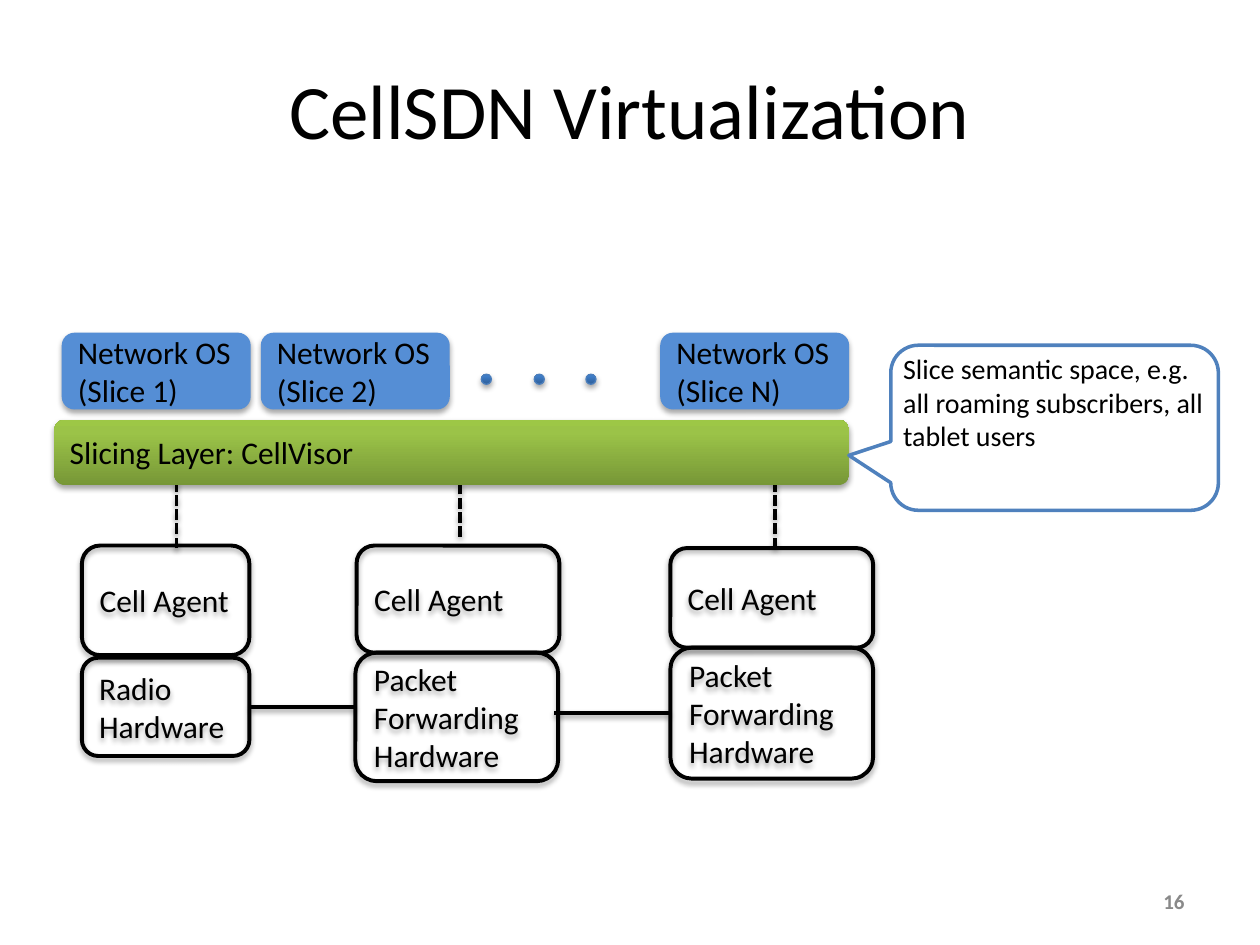
from typing import NamedTuple, Optional

from lxml.etree import SubElement
from pptx import Presentation
from pptx.dml.color import RGBColor
from pptx.enum.dml import MSO_LINE
from pptx.enum.shapes import MSO_CONNECTOR, MSO_SHAPE
from pptx.enum.text import MSO_ANCHOR as Anchor, MSO_AUTO_SIZE, PP_ALIGN as Align
from pptx.oxml.ns import qn
from pptx.util import Pt

PX = 9144  # EMU per px, 100 px to the inch
FONT = "Calibri"
BLACK, WHITE, BLUE = "000000", "FFFFFF", "558ED5"
GREEN_RAMP = [(0, "779737"), (80, "9BC348"), (100, "9DC746")]
DOT_RAMP = [(0, "2F5F99"), (80, "3D7CC7"), (100, "3A7CCB")]


class Box(NamedTuple):
    left: int
    top: int
    width: int
    height: int

    def emu(self) -> list[int]:
        return [v * PX for v in self]


class Node(NamedTuple):
    """A hardware column: an agent box standing on a device box."""
    agent: Box
    device: Box
    device_name: str


class Uplink(NamedTuple):
    x: int
    bottom: int


NODES = [
    Node(Box(65, 433, 133, 87), Box(65, 522, 133, 78), "Radio Hardware"),
    Node(Box(283, 433, 161, 85), Box(282, 518, 161, 102), "Packet Forwarding Hardware"),
    Node(Box(532, 435, 161, 79), Box(532, 514, 161, 104), "Packet Forwarding Hardware"),
]
UPLINKS = [Uplink(140, 435), Uplink(365, 426), Uplink(615, 435)]
SLICES = [(49, "1"), (207, "2"), (524, "N")]
DOTS = [382, 424, 465]


def rgb(color: str) -> RGBColor:
    return RGBColor.from_string(color)


def write(frame, lines: list[str], size: int = 18, color: str = BLACK,
          align=Align.LEFT, anchor=Anchor.MIDDLE, bold: bool = False) -> None:
    frame.word_wrap = True
    frame.vertical_anchor = anchor
    for i, line in enumerate(lines):
        paragraph = frame.paragraphs[0] if i == 0 else frame.add_paragraph()
        paragraph.alignment = align
        run = paragraph.add_run()
        run.text = line
        run.font.name, run.font.size, run.font.bold = FONT, Pt(size), bold
        run.font.color.rgb = rgb(color)


def add_shadow(effects, alpha: int, distance: int) -> None:
    shadow = SubElement(effects, qn("a:outerShdw"), blurRad="40000", dist=str(distance),
                        dir="5400000", rotWithShape="0")
    shade = SubElement(shadow, qn("a:srgbClr"), val=BLACK)
    SubElement(shade, qn("a:alpha"), val=str(alpha * 1000))


def fill_ramp(shape, ramp: list[tuple[int, str]]) -> None:
    """Fill with a gradient that runs from bottom to top."""
    shape.fill.gradient()
    shape.fill.gradient_angle = 90
    stops = shape._element.spPr.find(".//" + qn("a:gsLst"))
    for stop in list(stops):
        stops.remove(stop)
    for position, color in ramp:
        stop = SubElement(stops, qn("a:gs"), pos=str(position * 1000))
        SubElement(stop, qn("a:srgbClr"), val=color)


def add_shape(shapes, kind, box: Box, fill: Optional[str] = None, ramp=None,
              line: Optional[str] = None, line_pt: float = 2.25, shadow: bool = True):
    shape = shapes.add_shape(kind, *box.emu())
    if ramp:
        fill_ramp(shape, ramp)
    elif fill:
        shape.fill.solid()
        shape.fill.fore_color.rgb = rgb(fill)
    else:
        shape.fill.background()
    if line:
        shape.line.color.rgb = rgb(line)
        shape.line.width = Pt(line_pt)
    else:
        shape.line.fill.background()
    shape.shadow.inherit = False
    if shadow:
        add_shadow(shape._element.spPr.find(qn("a:effectLst")), 35, 23000)
    return shape


def add_label_box(shapes, box: Box, lines: list[str], **style):
    shape = add_shape(shapes, MSO_SHAPE.ROUNDED_RECTANGLE, box, **style)
    write(shape.text_frame, lines)
    return shape


def add_link(shapes, x1: int, y1: int, x2: int, y2: int, width: float = 2.25, dashed: bool = False):
    link = shapes.add_connector(MSO_CONNECTOR.STRAIGHT, x1 * PX, y1 * PX, x2 * PX, y2 * PX)
    link.line.color.rgb = rgb(BLACK)
    link.line.width = Pt(width)
    if dashed:
        link.line.dash_style = MSO_LINE.SQUARE_DOT
    add_shadow(SubElement(link._element.spPr, qn("a:effectLst")), 38, 20000)
    return link


def add_hardware(shapes) -> None:
    devices = []
    for node in NODES:
        add_label_box(shapes, node.agent, ["Cell Agent"], line=BLACK)
        devices.append(add_label_box(shapes, node.device, [node.device_name], line=BLACK))
    radio, _, last_switch = devices
    add_link(shapes, 282, 561, 198, 561).end_connect(radio, 3)
    add_link(shapes, 440, 566, 532, 566).end_connect(last_switch, 1)
    for uplink in UPLINKS:
        add_link(shapes, uplink.x, uplink.bottom, uplink.x, 360, 2, dashed=True)


def add_slices(shapes) -> None:
    add_label_box(shapes, Box(43, 333, 631, 52), ["Slicing Layer: CellVisor"], ramp=GREEN_RAMP)
    for left, number in SLICES:
        add_label_box(shapes, Box(left, 264, 150, 61),
                      ["Network OS", f"(Slice {number})"], fill=BLUE)
    for left in DOTS:
        add_shape(shapes, MSO_SHAPE.OVAL, Box(left, 297, 8, 8), ramp=DOT_RAMP,
                  line="4B7EBC", line_pt=0.75)


def add_callout(shapes) -> None:
    group = shapes.add_group_shape().shapes
    bubble = add_shape(group, MSO_SHAPE.ROUNDED_RECTANGULAR_CALLOUT, Box(707, 274, 260, 131),
                       fill=WHITE, line="4F81BD", line_pt=2, shadow=False)
    for i, value in enumerate((-0.628, 0.167, 0.167)):
        bubble.adjustments[i] = value
    note = group.add_textbox(*Box(707, 274, 260, 118).emu()).text_frame
    write(note, ["Slice semantic space, e.g. all roaming subscribers, all tablet users"],
          16, anchor=Anchor.TOP)
    note.auto_size = MSO_AUTO_SIZE.SHAPE_TO_FIT_TEXT


def main() -> None:
    deck = Presentation()
    deck.slide_width, deck.slide_height = 1000 * PX, 750 * PX
    slide = deck.slides.add_slide(deck.slide_layouts[5])
    shapes = slide.shapes
    title = shapes.title
    title.left, title.top, title.width, title.height = Box(50, 30, 900, 112).emu()
    write(title.text_frame, ["CellSDN Virtualization"], 44, align=Align.CENTER)
    add_hardware(shapes)
    add_slices(shapes)
    add_callout(shapes)
    page_number = shapes.add_textbox(*Box(717, 695, 233, 40).emu())
    write(page_number.text_frame, ["16"], 12, "898989", Align.RIGHT, bold=True)
    deck.save("out.pptx")


if __name__ == "__main__":
    main()
